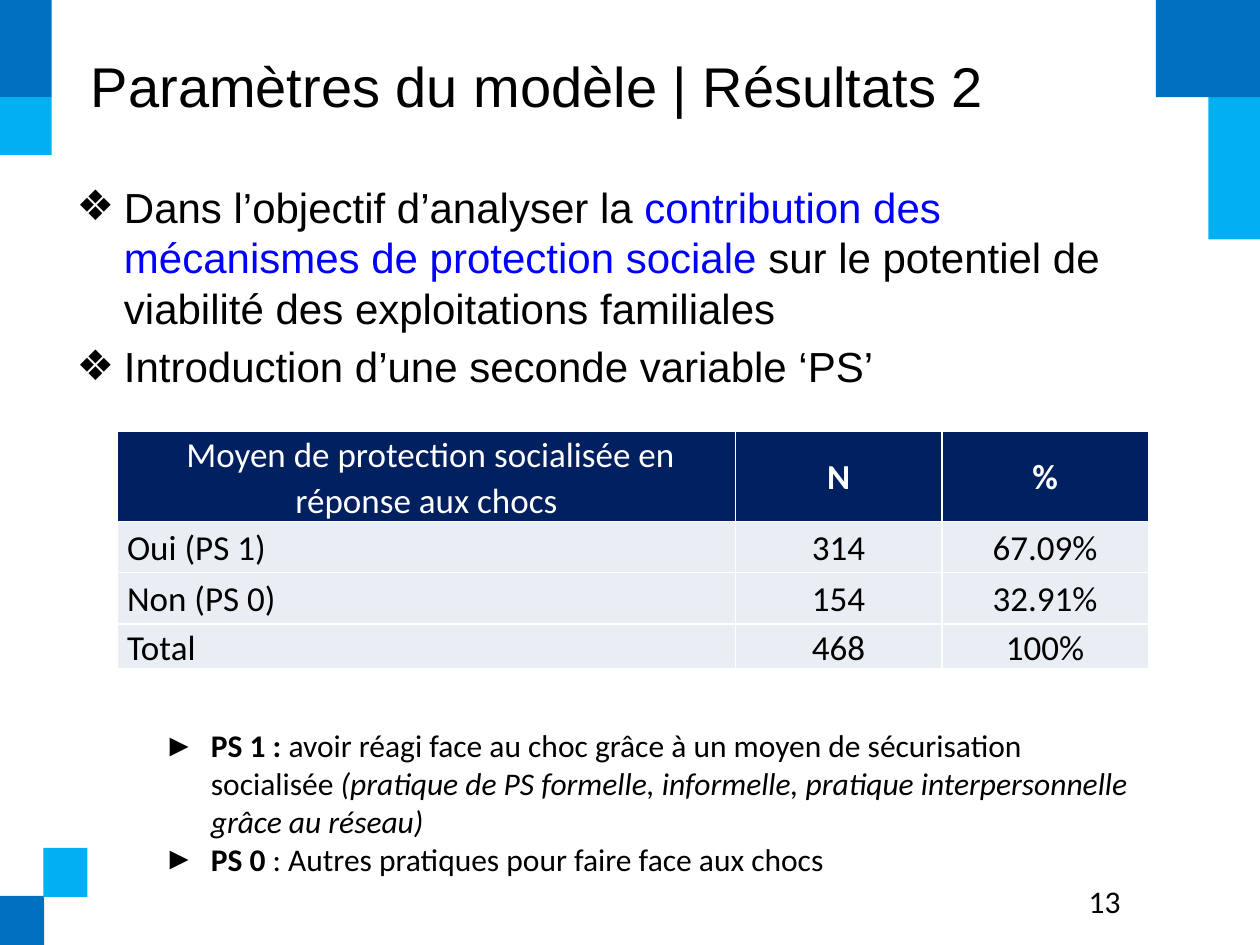
from dataclasses import dataclass

from lxml.etree import SubElement
from pptx import Presentation
from pptx.dml.color import RGBColor as Rgb
from pptx.enum.shapes import MSO_SHAPE as Shape
from pptx.enum.text import MSO_ANCHOR as Anchor, PP_ALIGN as Align
from pptx.oxml.ns import qn
from pptx.util import Pt


@dataclass(frozen=True)
class Theme:
    """Colours, fonts and type sizes of the slide."""
    black: str = "000000"
    white: str = "FFFFFF"
    accent: str = "0000FF"
    dark_blue: str = "0070C0"
    light_blue: str = "00B0F0"
    header: str = "002060"
    row: str = "E9EDF4"
    heading_font: str = "Arial"
    body_font: str = "Calibri"
    title_size: int = 32
    body_size: int = 24
    table_size: int = 20
    note_size: int = 18


class SlideBuilder:
    """Draws styled elements on the current slide."""

    def __init__(self, slide, theme):
        self.slide = slide
        self.theme = theme

    def block(self, left, top, width, height, color):
        """Draw a plain decorative rectangle."""
        block = self.slide.shapes.add_shape(
            Shape.RECTANGLE, Pt(left), Pt(top), Pt(width), Pt(height))
        block.shadow.inherit = False
        block.fill.solid()
        block.fill.fore_color.rgb = Rgb.from_string(color)
        block.line.fill.background()

    def add_spans(self, para, spans, font, size, color):
        """Fill a paragraph with (text, style) spans."""
        for text, style in spans:
            span = para.add_run()
            span.text = text
            span.font.name = font
            span.font.size = Pt(size)
            span.font.bold = style.get("bold", False)
            span.font.italic = style.get("italic", False)
            span.font.color.rgb = Rgb.from_string(style.get("color", color))

    def bullet(self, para, symbol):
        """Give a paragraph a hanging bullet."""
        props = para._p.get_or_add_pPr()
        props.set("marL", str(Pt(27)))
        props.set("indent", str(-Pt(27)))
        SubElement(props, qn("a:buFont"), typeface="Arial")
        SubElement(props, qn("a:buChar"), char=symbol)

    def text(self, area, paragraphs, font, size, symbol=None, before=0,
             anchor=Anchor.TOP, inset=(7.2, 3.6)):
        """Add a wrapped text box, bulleted when a symbol is given."""
        box = self.slide.shapes.add_textbox(*map(Pt, area))
        frame = box.text_frame
        frame.word_wrap = True
        frame.vertical_anchor = anchor
        frame.margin_left, frame.margin_top = map(Pt, inset)
        for index, spans in enumerate(paragraphs):
            para = frame.add_paragraph() if index else frame.paragraphs[0]
            para.space_before = Pt(before)
            if symbol:
                self.bullet(para, symbol)
            self.add_spans(para, spans, font, size, self.theme.black)

    def border(self, cell):
        """Outline a cell in white."""
        props = cell._tc.get_or_add_tcPr()
        for index, side in enumerate(("lnL", "lnR", "lnT", "lnB")):
            line = props.makeelement(qn(f"a:{side}"), {"w": str(Pt(1))})
            fill = SubElement(line, qn("a:solidFill"))
            SubElement(fill, qn("a:srgbClr"), val=self.theme.white)
            props.insert(index, line)

    def table(self, left, top, widths, heights, rows):
        """Add a table with a dark header row."""
        theme = self.theme
        table = self.slide.shapes.add_table(
            len(rows), len(widths), Pt(left), Pt(top),
            Pt(sum(widths)), Pt(sum(heights))).table
        for column, width in zip(table.columns, widths):
            column.width = Pt(width)
        for row_index, (height, row) in enumerate(zip(heights, rows)):
            table.rows[row_index].height = Pt(height)
            is_header = row_index == 0
            for column_index, spans in enumerate(row):
                cell = table.cell(row_index, column_index)
                cell.fill.solid()
                cell.fill.fore_color.rgb = Rgb.from_string(
                    theme.header if is_header else theme.row)
                cell.vertical_anchor = Anchor.MIDDLE
                cell.margin_left = cell.margin_right = Pt(5.4)
                cell.margin_top = cell.margin_bottom = Pt(0)
                para = cell.text_frame.paragraphs[0]
                is_label = column_index == 0 and not is_header
                para.alignment = Align.JUSTIFY if is_label else Align.CENTER
                para.line_spacing = 1.07
                self.add_spans(para, spans, theme.body_font, theme.table_size,
                               theme.white if is_header else theme.black)
                self.border(cell)


def main():
    """Build and save the slide."""
    theme = Theme()
    deck = Presentation()
    deck.slide_width, deck.slide_height = Pt(720), Pt(540)
    page = SlideBuilder(deck.slides.add_slide(deck.slide_layouts[6]), theme)
    plain, bold, italic = {}, {"bold": True}, {"italic": True}

    for area, color in (
            ((690.5, 0, 29.5, 136.8), theme.light_blue),
            ((660.5, 0, 59.5, 55.5), theme.dark_blue),
            ((0, 0, 29.5, 55.5), theme.dark_blue),
            ((0, 55.5, 29.5, 33), theme.light_blue),
            ((0, 512, 25.2, 28), theme.dark_blue),
            ((24.8, 484.5, 25.2, 28), theme.light_blue)):
        page.block(*area, color)

    page.text((36, 21.6, 648, 61.2),
              [[("Paramètres du modèle | Résultats 2", plain)]],
              theme.heading_font, theme.title_size, inset=(16, 7.8))
    page.text((36.7, 100, 646.6, 386), [
        [("Dans l’objectif d’analyser la ", plain),
         ("contribution des mécanismes de protection sociale ",
          {"color": theme.accent}),
         ("sur le potentiel de viabilité des exploitations familiales", plain)],
        [("Introduction d’une seconde variable ‘PS’", plain)],
    ], theme.heading_font, theme.body_size, symbol="❖", before=4.8)

    header = [[(" ", bold),
               ("Moyen de protection socialisée en réponse aux chocs", plain)],
              [("N", bold)], [("%", bold)]]
    values = (("Oui (PS 1)", "314", "67.09%"),
              ("Non (PS 0)", "154", "32.91%"),
              ("Total", "468", "100%"))
    body = [[[(value, plain)] for value in row] for row in values]
    page.table(67.2, 246.5, (353, 118, 118), (45.4, 29.3, 29.3, 22.3),
               [header, *body])

    page.text((86.4, 411, 569, 94.3), [
        [("PS 1 : ", bold),
         ("avoir réagi face au choc grâce à un moyen de sécurisation "
          "socialisée ", plain),
         ("(pratique de PS formelle, informelle, pratique interpersonnelle "
          "grâce au réseau)", italic)],
        [("PS 0", bold),
         (" : Autres pratiques pour faire face aux chocs", plain)],
    ], theme.body_font, theme.note_size, symbol="►", anchor=Anchor.MIDDLE)
    page.text((615, 500.4, 69, 28.8), [[("13", plain)]],
              theme.body_font, theme.note_size)
    deck.save("out.pptx")


if __name__ == "__main__":
    main()
